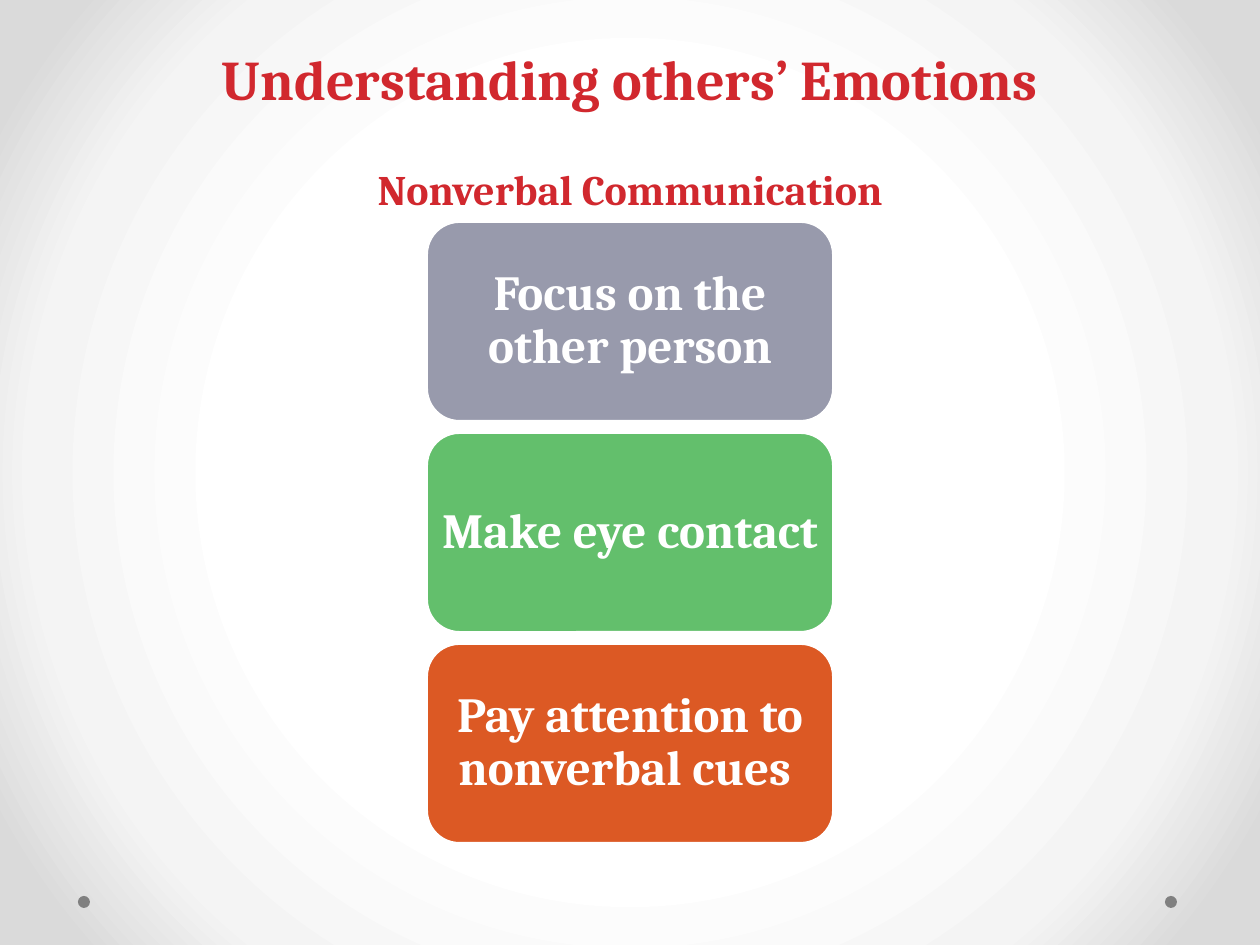
from lxml import etree
from pptx import Presentation
from pptx import util as u
from pptx.dml.color import RGBColor
from pptx.enum import shapes, text
from pptx.oxml.ns import qn

RED = RGBColor(0xD1, 0x28, 0x2E)
WHITE = RGBColor(0xFF, 0xFF, 0xFF)
LIGHT_GRAY = RGBColor(0xF4, 0xF4, 0xF4)
SILVER = RGBColor(0xDA, 0xDA, 0xDA)
DOT_GRAY = RGBColor(0x80, 0x80, 0x80)
SLATE = RGBColor(0x98, 0x9A, 0xAC)
GREEN = RGBColor(0x63, 0xBF, 0x6C)
ORANGE = RGBColor(0xDC, 0x59, 0x24)


def px(length):
    """Turn px, at 126 to the inch, into EMU."""
    return u.Emu(length * 914400 // 126)


def write(paragraph, words, size, color, spacing):
    run = paragraph.add_run()
    run.text = words
    run.font.name = "Cambria"
    run.font.size = u.Pt(size)
    run.font.bold = True
    run.font.color.rgb = color
    paragraph.alignment = text.PP_ALIGN.CENTER
    paragraph.line_spacing = spacing


presentation = Presentation()
presentation.slide_width = px(1260)
presentation.slide_height = px(945)
slide = presentation.slides.add_slide(presentation.slide_layouts[5])

# Background: white centre fading to gray corners
slide.background.fill.gradient()
gradient = slide.element.find(".//" + qn("a:gradFill"))
for child in list(gradient):
    gradient.remove(child)
stops = etree.SubElement(gradient, qn("a:gsLst"))
for position, color in ((50, WHITE), (76, LIGHT_GRAY), (92, SILVER)):
    stop = etree.SubElement(stops, qn("a:gs"), pos=str(position * 1000))
    etree.SubElement(stop, qn("a:srgbClr"), val=str(color))
circle = etree.SubElement(gradient, qn("a:path"), path="circle")
etree.SubElement(circle, qn("a:fillToRect"), l="50000", t="50000", r="50000", b="50000")

# Corner dots
for left in (78, 1165):
    dot = slide.shapes.add_shape(shapes.MSO_SHAPE.OVAL, px(left), px(896), px(12), px(12))
    dot.shadow.inherit = False
    dot.fill.solid()
    dot.fill.fore_color.rgb = DOT_GRAY
    dot.line.fill.background()

# Title with subtitle line
title = slide.shapes.title
title.left, title.top, title.width, title.height = px(63), px(0), px(1134), px(220)
title.text_frame.vertical_anchor = text.MSO_ANCHOR.BOTTOM
title.text_frame.auto_size = text.MSO_AUTO_SIZE.NONE
heading = title.text_frame.paragraphs[0]
write(heading, "Understanding others’ Emotions", size=32, color=RED, spacing=u.Pt(58))
heading.add_line_break()
write(heading, "Nonverbal Communication", size=24, color=RED, spacing=u.Pt(58))

# Stacked advice boxes
advice = (
    ("Focus on the other person", SLATE),
    ("Make eye contact", GREEN),
    ("Pay attention to nonverbal cues ", ORANGE),
)
for index, (words, color) in enumerate(advice):
    box = slide.shapes.add_shape(
        shapes.MSO_SHAPE.ROUNDED_RECTANGLE, px(426), px(221 + 211 * index), px(408), px(201))
    box.shadow.inherit = False
    box.fill.solid()
    box.fill.fore_color.rgb = color
    box.line.color.rgb = WHITE
    box.line.width = u.Pt(2.25)
    frame = box.text_frame
    frame.word_wrap = True
    frame.vertical_anchor = text.MSO_ANCHOR.MIDDLE
    frame.margin_left = frame.margin_right = px(5)
    frame.margin_top = frame.margin_bottom = px(0)
    write(frame.paragraphs[0], words, size=28, color=WHITE, spacing=0.9)

presentation.save("out.pptx")
